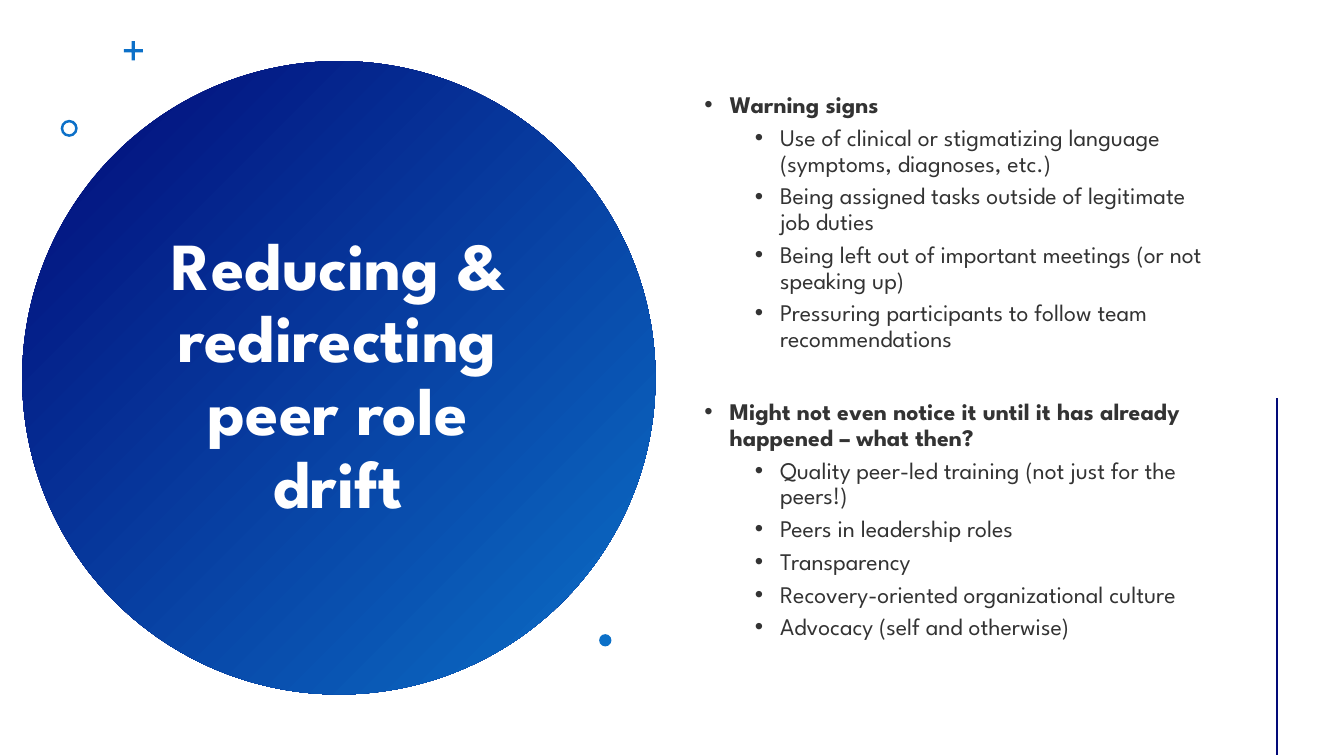
from dataclasses import dataclass

from lxml.etree import SubElement
from pptx import Presentation
from pptx.dml.color import RGBColor
from pptx.enum.shapes import MSO_CONNECTOR as CONN, MSO_SHAPE as SHAPE
from pptx.enum.text import MSO_ANCHOR as ANCHOR, MSO_AUTO_SIZE as AUTOSIZE, PP_ALIGN as ALIGN
from pptx.oxml.ns import qn
from pptx.util import Cm, Pt

# Content
TITLE = "Reducing & redirecting peer role drift"
SECTIONS = [
    ("Warning signs", [
        "Use of clinical or stigmatizing language (symptoms, diagnoses, etc.)",
        "Being assigned tasks outside of legitimate job duties",
        "Being left out of important meetings (or not speaking up)",
        "Pressuring participants to follow team recommendations",
    ]),
    ("Might not even notice it until it has already happened – what then?", [
        "Quality peer-led training (not just for the peers!)",
        "Peers in leadership roles",
        "Transparency",
        "Recovery-oriented organizational culture",
        "Advocacy (self and otherwise)",
    ]),
]
# Small accents: preset, left, top, size (cm), adjustment
ACCENTS = [
    (SHAPE.CROSS, 3.12, 1.04, 0.48, 0.42),
    (SHAPE.DONUT, 1.53, 3.02, 0.43, 0.15),
    (SHAPE.OVAL, 15.1, 15.98, 0.31, None),
]


@dataclass(frozen=True)
class Theme:
    font: str = "League Spartan"
    navy: RGBColor = RGBColor(0x02, 0x0A, 0x78)
    blue: RGBColor = RGBColor(0x0C, 0x70, 0xC8)
    white: RGBColor = RGBColor(0xFF, 0xFF, 0xFF)
    ink: RGBColor = RGBColor(0x33, 0x33, 0x33)
    title_size: int = 48
    body_size: int = 17
    line_spacing: float = 0.9
    item_gap: int = 5
    section_gap: int = 34


T = Theme()


def place(sp, left, top, width, height):
    sp.left, sp.top, sp.width, sp.height = map(Cm, (left, top, width, height))
    tf = sp.text_frame
    tf.word_wrap = True
    tf.auto_size = AUTOSIZE.NONE
    tf.vertical_anchor = ANCHOR.MIDDLE
    return tf


def write(p, text, *, size, color, bold=False, align=ALIGN.LEFT, before=0):
    p.alignment = align
    p.line_spacing = T.line_spacing
    p.space_before, p.space_after = Pt(before), Pt(0)
    r = p.add_run()
    r.text = text
    r.font.name, r.font.size, r.font.bold = T.font, Pt(size), bold
    r.font.color.rgb = color


def add_bullet(p, level):
    p.level = level
    pPr = p._p.get_or_add_pPr()
    pPr.set("marL", str(Cm(0.635 + 1.27 * level)))
    pPr.set("indent", str(-Cm(0.635)))
    SubElement(pPr, qn("a:buFont")).set("typeface", "Arial")
    SubElement(pPr, qn("a:buChar")).set("char", "•")


def add_shape(slide, preset, left, top, size):
    sp = slide.shapes.add_shape(preset, Cm(left), Cm(top), Cm(size), Cm(size))
    sp.shadow.inherit = False
    sp.line.fill.background()
    return sp


def add_circle(slide):
    sp = add_shape(slide, SHAPE.OVAL, 0.56, 1.54, 15.96)
    sp.fill.gradient()
    sp.fill.gradient_angle = 315
    for stop, color in zip(sp.fill.gradient_stops, (T.navy, T.blue)):
        stop.color.rgb = color
    slide.shapes._spTree.insert(2, sp._element)  # behind the title


def add_list(sp):
    tf = place(sp, 17.5, 1.45, 13.26, 15.6)
    rows = []
    for i, (heading, items) in enumerate(SECTIONS):
        rows.append((heading, 0, T.section_gap if i else 0))
        rows += [(item, 1, T.item_gap) for item in items]
    for i, (text, level, before) in enumerate(rows):
        p = tf.add_paragraph() if i else tf.paragraphs[0]
        add_bullet(p, level)
        write(p, text, size=T.body_size, color=T.ink, bold=level == 0, before=before)


def main():
    prs = Presentation()
    prs.slide_width, prs.slide_height = Cm(33.87), Cm(19.05)
    slide = prs.slides.add_slide(prs.slide_layouts[1])

    # Title on the gradient circle
    add_circle(slide)
    tf = place(slide.shapes.title, 3.45, 3.58, 10.13, 11.86)
    write(tf.paragraphs[0], TITLE, size=T.title_size, color=T.white,
          bold=True, align=ALIGN.CENTER)

    # Bulleted list
    add_list(slide.placeholders[1])

    # Accents
    for preset, left, top, size, adjustment in ACCENTS:
        sp = add_shape(slide, preset, left, top, size)
        sp.fill.solid()
        sp.fill.fore_color.rgb = T.blue
        if adjustment is not None:
            sp.adjustments[0] = adjustment

    # Vertical rule at the right
    rule = slide.shapes.add_connector(CONN.STRAIGHT, Cm(32.18), Cm(10.03), Cm(32.18), Cm(19.03))
    rule.line.color.rgb = T.navy
    rule.line.width = Pt(2)
    SubElement(rule._element.spPr, qn("a:effectLst"))

    prs.save("out.pptx")


if __name__ == "__main__":
    main()
